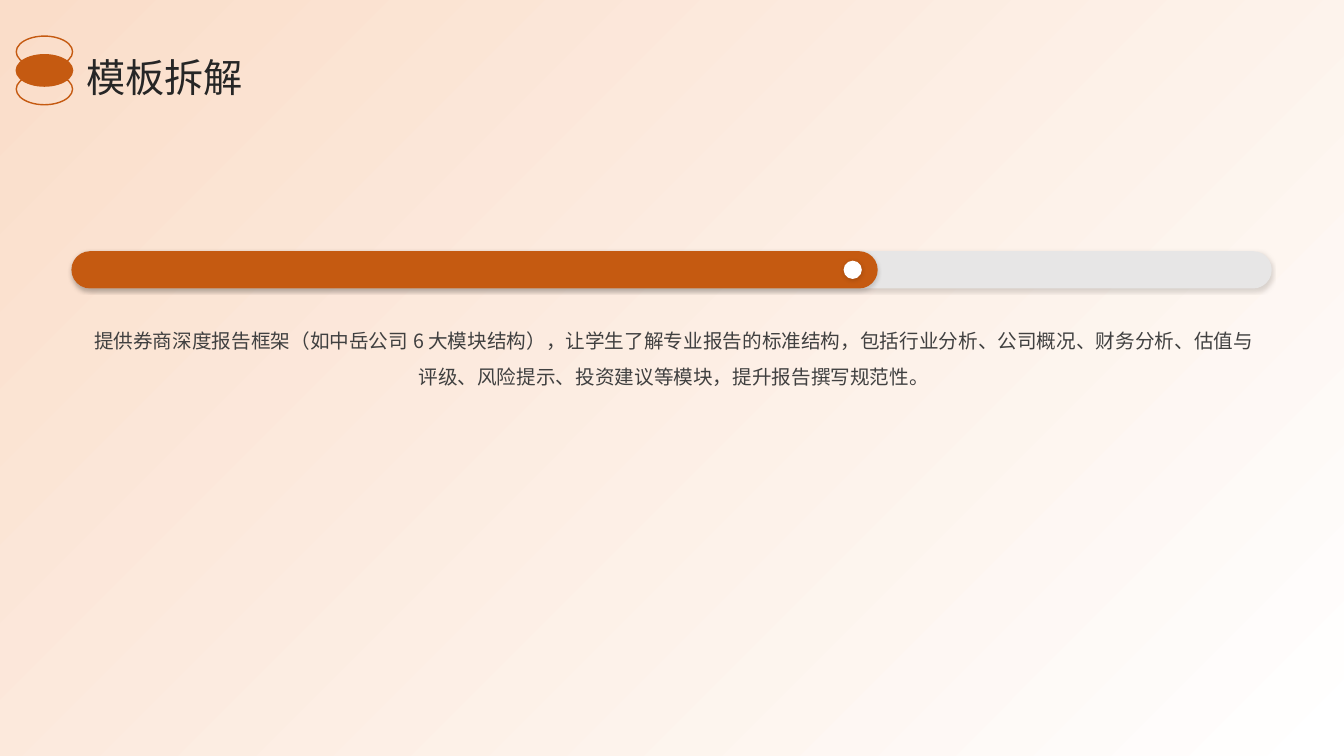
from dataclasses import dataclass

from lxml.etree import SubElement
from pptx import Presentation
from pptx.dml.color import RGBColor
from pptx.enum.shapes import MSO_SHAPE
from pptx.enum.text import MSO_ANCHOR, PP_ALIGN
from pptx.oxml.ns import qn
from pptx.util import Cm, Pt


@dataclass(frozen=True)
class Theme:
    font: str = "Noto Sans CJK SC"
    accent: str = "C55A11"
    track: str = "E7E6E6"
    white: str = "FFFFFF"
    peach: str = "FADDC9"
    title_color: str = "262626"
    body_color: str = "404040"
    title_size: int = 28
    body_size: int = 14


def rgb(value):
    return RGBColor.from_string(value)


def write_text(frame, text, *, font, size, color, align=PP_ALIGN.LEFT,
               line_spacing=1.0):
    paragraph = frame.paragraphs[0]
    paragraph.alignment = align
    paragraph.line_spacing = line_spacing
    run = paragraph.add_run()
    run.text = text
    run.font.name = font
    run.font.size = Pt(size)
    run.font.color.rgb = rgb(color)
    SubElement(run.font._element, qn("a:ea"), typeface=font)


def add_soft_shadow(shape):
    """Give the shape a faint shadow falling straight down."""
    effects = shape._element.spPr.find(qn("a:effectLst"))
    shadow = SubElement(effects, qn("a:outerShdw"), blurRad=str(Pt(3)),
                        dist=str(Pt(1)), dir="5400000", algn="t",
                        rotWithShape="0")
    color = SubElement(shadow, qn("a:srgbClr"), val="000000")
    SubElement(color, qn("a:alpha"), val="15000")


class SlideBuilder:
    def __init__(self, slide, theme):
        self.slide = slide
        self.theme = theme

    def shape(self, kind, left, top, width, height, *, fill=None, line=None,
              shadow=False, parent=None):
        shapes = (parent or self.slide).shapes
        shape = shapes.add_shape(kind, Cm(left), Cm(top), Cm(width), Cm(height))
        shape.shadow.inherit = False
        if fill:
            shape.fill.solid()
            shape.fill.fore_color.rgb = rgb(fill)
        else:
            shape.fill.background()
        if line:
            shape.line.color.rgb = rgb(line)
            shape.line.width = Pt(1)
        else:
            shape.line.fill.background()
        if shadow:
            add_soft_shadow(shape)
        return shape

    def backdrop(self, width, height):
        backdrop = self.shape(MSO_SHAPE.RECTANGLE, 0, 0, width, height)
        backdrop.fill.gradient()
        backdrop.fill.gradient_angle = 135
        colors = (self.theme.white, self.theme.peach)
        for stop, position, color in zip(backdrop.fill.gradient_stops, (0, 1), colors):
            stop.position = position
            stop.color.rgb = rgb(color)

    def pill(self, left, top, width, height, fill):
        pill = self.shape(MSO_SHAPE.ROUNDED_RECTANGLE, left, top, width, height,
                          fill=fill, shadow=True)
        pill.adjustments[0] = 0.5

    def progress_bar(self, left, top, width, height, done):
        """Draw a track, its filled part of length done, and a round knob."""
        self.pill(left, top, width, height, self.theme.track)
        self.pill(left, top, done, height, self.theme.accent)
        knob = 0.46
        self.shape(MSO_SHAPE.OVAL, left + done - 0.4 - knob,
                   top + (height - knob) / 2, knob, knob,
                   fill=self.theme.white, shadow=True)

    def text(self, text, left, top, width, height, *, margins=(0, 0, 0, 0),
             anchor=MSO_ANCHOR.TOP, **text_format):
        box = self.slide.shapes.add_textbox(Cm(left), Cm(top), Cm(width), Cm(height))
        frame = box.text_frame
        frame.word_wrap = True
        frame.vertical_anchor = anchor
        (frame.margin_left, frame.margin_top,
         frame.margin_right, frame.margin_bottom) = map(Cm, margins)
        write_text(frame, text, font=self.theme.font, **text_format)

    def stacked_ovals(self, left, top, width, height, step):
        """Stack three ovals from the bottom up, the middle one filled."""
        stack = self.slide.shapes.add_group_shape()
        for row, fill in ((2, None), (1, self.theme.accent), (0, None)):
            self.shape(MSO_SHAPE.OVAL, left, top + row * step, width, height,
                       fill=fill, line=self.theme.accent, parent=stack)


def main():
    slide_width, slide_height = 33.87, 19.05
    theme = Theme()
    deck = Presentation()
    deck.slide_width, deck.slide_height = Cm(slide_width), Cm(slide_height)
    builder = SlideBuilder(deck.slides.add_slide(deck.slide_layouts[6]), theme)

    builder.backdrop(slide_width, slide_height)
    builder.progress_bar(1.8, 6.33, 30.25, 0.94, done=20.32)
    builder.text(
        "提供券商深度报告框架（如中岳公司 6 大模块结构），让学生了解专业报告的标准结构，"
        "包括行业分析、公司概况、财务分析、估值与评级、风险提示、投资建议等模块，"
        "提升报告撰写规范性。",
        2.16, 7.9, 30.25, 9.3, margins=(0, 0.1, 0.6, 0.1),
        size=theme.body_size, color=theme.body_color,
        align=PP_ALIGN.CENTER, line_spacing=1.5)
    builder.text("模板拆解", 2.18, 1.24, 29.64, 1.3, anchor=MSO_ANCHOR.MIDDLE,
                 size=theme.title_size, color=theme.title_color, line_spacing=1.1)
    builder.stacked_ovals(0.41, 0.91, 1.42, 0.79, step=0.47)

    deck.save("out.pptx")


if __name__ == "__main__":
    main()
